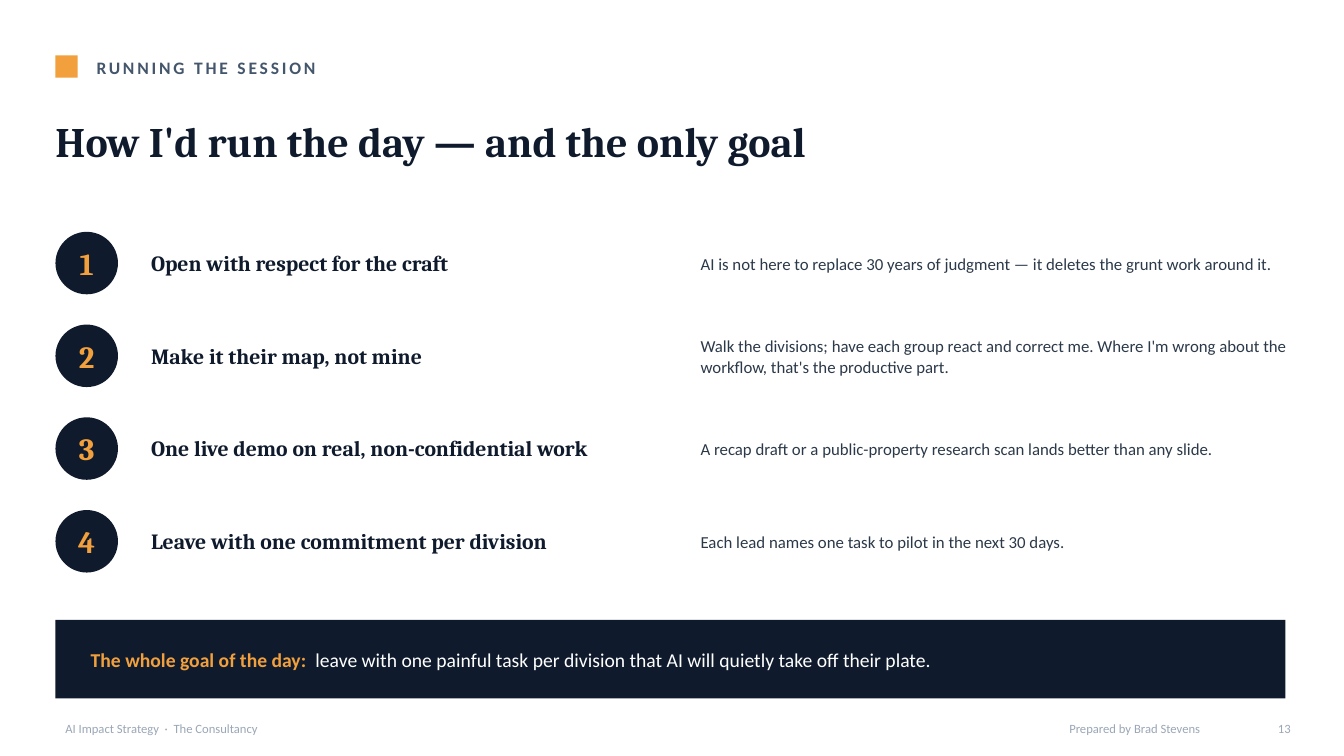
from pptx import Presentation
from pptx.dml.color import RGBColor
from pptx.enum.shapes import MSO_SHAPE
from pptx.enum.text import MSO_ANCHOR, PP_ALIGN
from pptx.util import Pt

COLORS = {
    "navy": "0F1B2D",
    "orange": "F2A03D",
    "slate": "44566C",
    "body": "2B3949",
    "muted": "9AA7B6",
    "white": "FFFFFF",
}
SERIF, SANS = "Cambria", "Calibri"
LEFT, CONTENT_WIDTH = 39.6, 878.4
FIRST_ROW, ROW_STEP = 165.6, 66.24
CIRCLE_SIZE, ROW_TEXT_HEIGHT = 44.64, 47.52
FOOTER_TOP, FOOTER_HEIGHT = 509.76, 21.6

STEPS = [
    ("Open with respect for the craft",
     "AI is not here to replace 30 years of judgment — it deletes the grunt work around it."),
    ("Make it their map, not mine",
     "Walk the divisions; have each group react and correct me. "
     "Where I'm wrong about the workflow, that's the productive part."),
    ("One live demo on real, non-confidential work",
     "A recap draft or a public-property research scan lands better than any slide."),
    ("Leave with one commitment per division",
     "Each lead names one task to pilot in the next 30 days."),
]


def add_run(paragraph, text, size, color, font=SANS, bold=False, tracking=0):
    """Append a run; tracking is extra letter spacing in points."""
    run = paragraph.add_run()
    run.text = text
    run.font.size = Pt(size)
    run.font.name = font
    run.font.bold = bold
    run.font.color.rgb = RGBColor.from_string(COLORS[color])
    if tracking:
        run.font._element.set("spc", str(round(tracking * 100)))


def prepare_paragraph(shape, align=PP_ALIGN.LEFT, line=None, margins=None):
    """Set up the shape's text frame and return its first paragraph."""
    frame = shape.text_frame
    frame.word_wrap = True
    frame.vertical_anchor = MSO_ANCHOR.MIDDLE
    if margins is not None:
        (frame.margin_left, frame.margin_top,
         frame.margin_right, frame.margin_bottom) = map(Pt, margins)
    paragraph = frame.paragraphs[0]
    paragraph.alignment = align
    if line:
        paragraph.line_spacing = Pt(line)
    return paragraph


def add_text(slide, left, top, width, height, **layout):
    """Add a text box and return its empty first paragraph."""
    box = slide.shapes.add_textbox(Pt(left), Pt(top), Pt(width), Pt(height))
    return prepare_paragraph(box, **layout)


def add_filled(slide, kind, left, top, width, height, color):
    shape = slide.shapes.add_shape(kind, Pt(left), Pt(top), Pt(width), Pt(height))
    shape.shadow.inherit = False
    shape.fill.solid()
    shape.fill.fore_color.rgb = RGBColor.from_string(COLORS[color])
    shape.line.fill.background()
    return shape


def add_header(slide):
    add_filled(slide, MSO_SHAPE.RECTANGLE, LEFT, 39.6, 15.84, 15.84, "orange")
    section = add_text(slide, 61.92, 36, 792, 23.76)
    add_run(section, "RUNNING THE SESSION", 12.5, "slate", bold=True, tracking=2)
    title = add_text(slide, LEFT, 68.4, CONTENT_WIDTH, 64.8, margins=(0, 0, 0, 0))
    add_run(title, "How I'd run the day — and the only goal", 30, "navy", SERIF, True)


def add_step(slide, number, heading, detail):
    top = FIRST_ROW + (number - 1) * ROW_STEP
    circle = add_filled(slide, MSO_SHAPE.OVAL, LEFT, top, CIRCLE_SIZE, CIRCLE_SIZE, "navy")
    label = prepare_paragraph(circle, PP_ALIGN.CENTER, margins=(0, 0, 0, 0))
    add_run(label, str(number), 22, "orange", SERIF, True)

    text_top = top - (ROW_TEXT_HEIGHT - CIRCLE_SIZE) / 2
    left_cell = add_text(slide, 100.8, text_top, 388.8, ROW_TEXT_HEIGHT, line=18)
    add_run(left_cell, heading, 15.5, "navy", SERIF, True)
    right_cell = add_text(slide, 493.2, text_top, 464.4, ROW_TEXT_HEIGHT, line=15)
    add_run(right_cell, detail, 12, "body")


def add_goal_banner(slide):
    banner = add_filled(slide, MSO_SHAPE.RECTANGLE, LEFT, 442.8, CONTENT_WIDTH, 56.16, "navy")
    goal = prepare_paragraph(banner, line=18, margins=(25.2, 3.6, 25.2, 3.6))
    add_run(goal, "The whole goal of the day:", 14, "orange", bold=True)
    add_run(goal, " ", 14, "orange", bold=True, tracking=3.2)
    add_run(goal, "leave with one painful task per division that AI will quietly "
            "take off their plate.", 14, "white")


def add_footer(slide):
    source = add_text(slide, LEFT, FOOTER_TOP, 504, FOOTER_HEIGHT)
    for text, tracking in [("AI Impact Strategy", 0), (" ", 2), ("·", 0),
                           (" ", 2), ("The Consultancy", 0)]:
        add_run(source, text, 9, "muted", tracking=tracking)
    for left, width, text in [(648, 216, "Prepared by Brad Stevens"), (900, 28.8, "13")]:
        paragraph = add_text(slide, left, FOOTER_TOP, width, FOOTER_HEIGHT,
                             align=PP_ALIGN.RIGHT)
        add_run(paragraph, text, 9, "muted")


def main():
    presentation = Presentation()
    presentation.slide_width, presentation.slide_height = Pt(959.76), Pt(540)
    slide = presentation.slides.add_slide(presentation.slide_layouts[6])
    add_header(slide)
    for number, (heading, detail) in enumerate(STEPS, 1):
        add_step(slide, number, heading, detail)
    add_goal_banner(slide)
    add_footer(slide)
    presentation.save("out.pptx")


if __name__ == "__main__":
    main()
